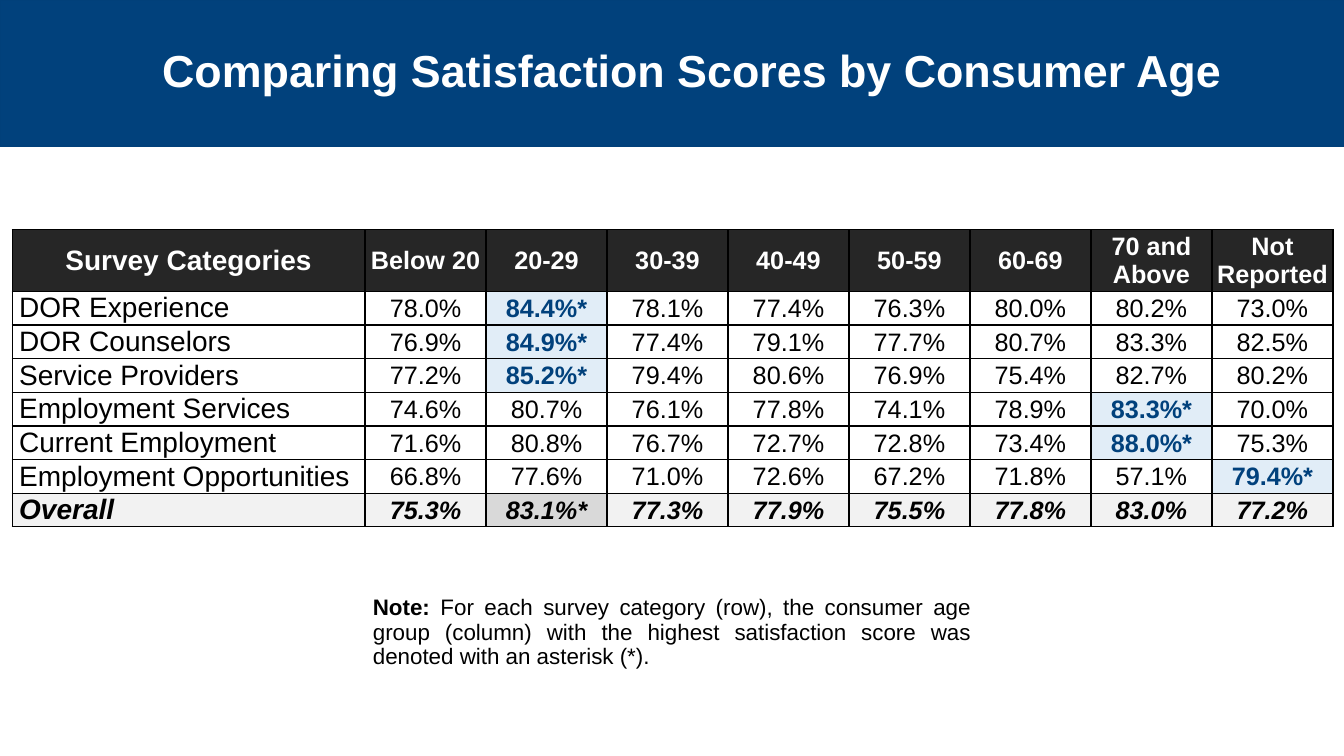
from dataclasses import dataclass

from pptx import Presentation
from pptx import util as u
from pptx.dml.color import RGBColor
from pptx.enum import shapes, text
from pptx.oxml import parse_xml
from pptx.oxml.ns import nsdecls

LEFT, CENTER = text.PP_ALIGN.LEFT, text.PP_ALIGN.CENTER
MIDDLE, TOP = text.MSO_ANCHOR.MIDDLE, text.MSO_ANCHOR.TOP

AGES = ["Below 20", "20-29", "30-39", "40-49", "50-59", "60-69",
        "70 and Above", "Not Reported"]
SCORES = {
    "DOR Experience": [78.0, 84.4, 78.1, 77.4, 76.3, 80.0, 80.2, 73.0],
    "DOR Counselors": [76.9, 84.9, 77.4, 79.1, 77.7, 80.7, 83.3, 82.5],
    "Service Providers": [77.2, 85.2, 79.4, 80.6, 76.9, 75.4, 82.7, 80.2],
    "Employment Services": [74.6, 80.7, 76.1, 77.8, 74.1, 78.9, 83.3, 70.0],
    "Current Employment": [71.6, 80.8, 76.7, 72.7, 72.8, 73.4, 88.0, 75.3],
    "Employment Opportunities": [66.8, 77.6, 71.0, 72.6, 67.2, 71.8, 57.1, 79.4],
    "Overall": [75.3, 83.1, 77.3, 77.9, 75.5, 77.8, 83.0, 77.2],
}


@dataclass(frozen=True)
class Theme:
    font: str = "Arial"
    navy: str = "01417C"
    navy_line: str = "01407A"
    header: str = "262626"
    best: str = "E1EDF7"
    total: str = "F2F2F2"
    total_best: str = "D9D9D9"
    white: str = "FFFFFF"
    black: str = "000000"
    title_size: int = 32
    label_size: int = 20
    score_size: int = 18
    note_size: int = 16


def add_run(p, content, *, font, size, color, bold=False, italic=False):
    r = p.add_run()
    r.text = content
    r.font.name, r.font.size = font, u.Pt(size)
    r.font.bold, r.font.italic = bold, italic
    r.font.color.rgb = RGBColor.from_string(color)


class SlideBuilder:
    """Draws styled elements on the current slide."""

    def __init__(self, slide, theme):
        self.s = slide
        self.theme = theme

    def band(self, width, height):
        sp = self.s.shapes.add_shape(
            shapes.MSO_SHAPE.RECTANGLE, 0, 0, u.Inches(width), u.Inches(height))
        sp.shadow.inherit = False
        sp.fill.solid()
        sp.fill.fore_color.rgb = RGBColor.from_string(self.theme.navy)
        sp.line.color.rgb = RGBColor.from_string(self.theme.navy_line)
        sp.line.width = u.Pt(1)

    def text_box(self, box, runs, *, size, color, align=LEFT, anchor=TOP):
        tf = self.s.shapes.add_textbox(*map(u.Inches, box)).text_frame
        tf.word_wrap = True
        tf.vertical_anchor = anchor
        p = tf.paragraphs[0]
        p.alignment, p.line_spacing = align, 0.9
        for content, bold in runs:
            add_run(p, content, font=self.theme.font, size=size, color=color, bold=bold)

    def cell(self, cell, content, *, fill, label=False, **style):
        cell.vertical_anchor = MIDDLE
        cell.margin_left = cell.margin_right = u.Inches(0.07 if label else 0.01)
        cell.margin_top = u.Inches(0 if label else 0.01)
        cell.margin_bottom = 0
        tc_pr = cell._tc.get_or_add_tcPr()
        for side in "LRTB":
            tc_pr.append(parse_xml(
                f'<a:ln{side} {nsdecls("a")} w="12700"><a:solidFill>'
                f'<a:srgbClr val="{self.theme.black}"/></a:solidFill></a:ln{side}>'))
        cell.fill.solid()
        cell.fill.fore_color.rgb = RGBColor.from_string(fill)
        p = cell.text_frame.paragraphs[0]
        p.alignment = style.pop("align", CENTER)
        size = self.theme.label_size if label else self.theme.score_size
        add_run(p, content, font=self.theme.font, size=size, **style)

    def score_table(self, box, widths, heights):
        t = self.theme
        table = self.s.shapes.add_table(
            len(heights), len(widths), *map(u.Inches, box)).table
        table.horz_banding = False
        for column, width in zip(table.columns, widths):
            column.width = u.Inches(width)
        for row, height in zip(table.rows, heights):
            row.height = u.Inches(height)

        for col, heading in enumerate(["Survey Categories", *AGES]):
            self.cell(table.cell(0, col), heading, fill=t.header,
                      label=col == 0, color=t.white, bold=True)
        for row, (category, scores) in enumerate(SCORES.items(), 1):
            overall = category == "Overall"
            base, best = (t.total, t.total_best) if overall else (t.white, t.best)
            self.cell(table.cell(row, 0), category, fill=base, label=True,
                      align=LEFT, color=t.black, bold=overall, italic=overall)
            for col, score in enumerate(scores, 1):
                top = score == max(scores)
                self.cell(table.cell(row, col), f"{score:.1f}%" + "*" * top,
                          fill=best if top else base,
                          color=t.navy if top and not overall else t.black,
                          bold=top or overall, italic=overall)


def main():
    prs = Presentation()
    prs.slide_width, prs.slide_height = u.Inches(13.33), u.Inches(7.5)
    theme = Theme()
    slide = SlideBuilder(prs.slides.add_slide(prs.slide_layouts[6]), theme)

    slide.band(13.33, 1.45)
    slide.text_box((1.51, 0, 11.83, 1.45),
                   [("Comparing Satisfaction Scores by Consumer Age", True)],
                   size=theme.title_size, color=theme.white, anchor=MIDDLE)
    slide.score_table((0.12, 2.28, 13.1, 2.74),
                      [3.5] + [1.2] * len(AGES), [0.57] + [0.31] * len(SCORES))
    slide.text_box((3.6, 5.87, 6.13, 1.16),
                   [("Note: ", True),
                    ("For each survey category (row), the consumer age group (column) "
                     "with the highest satisfaction score was denoted with an "
                     "asterisk (*).", False)],
                   size=theme.note_size, color=theme.black,
                   align=text.PP_ALIGN.JUSTIFY)
    prs.save("out.pptx")


if __name__ == "__main__":
    main()
